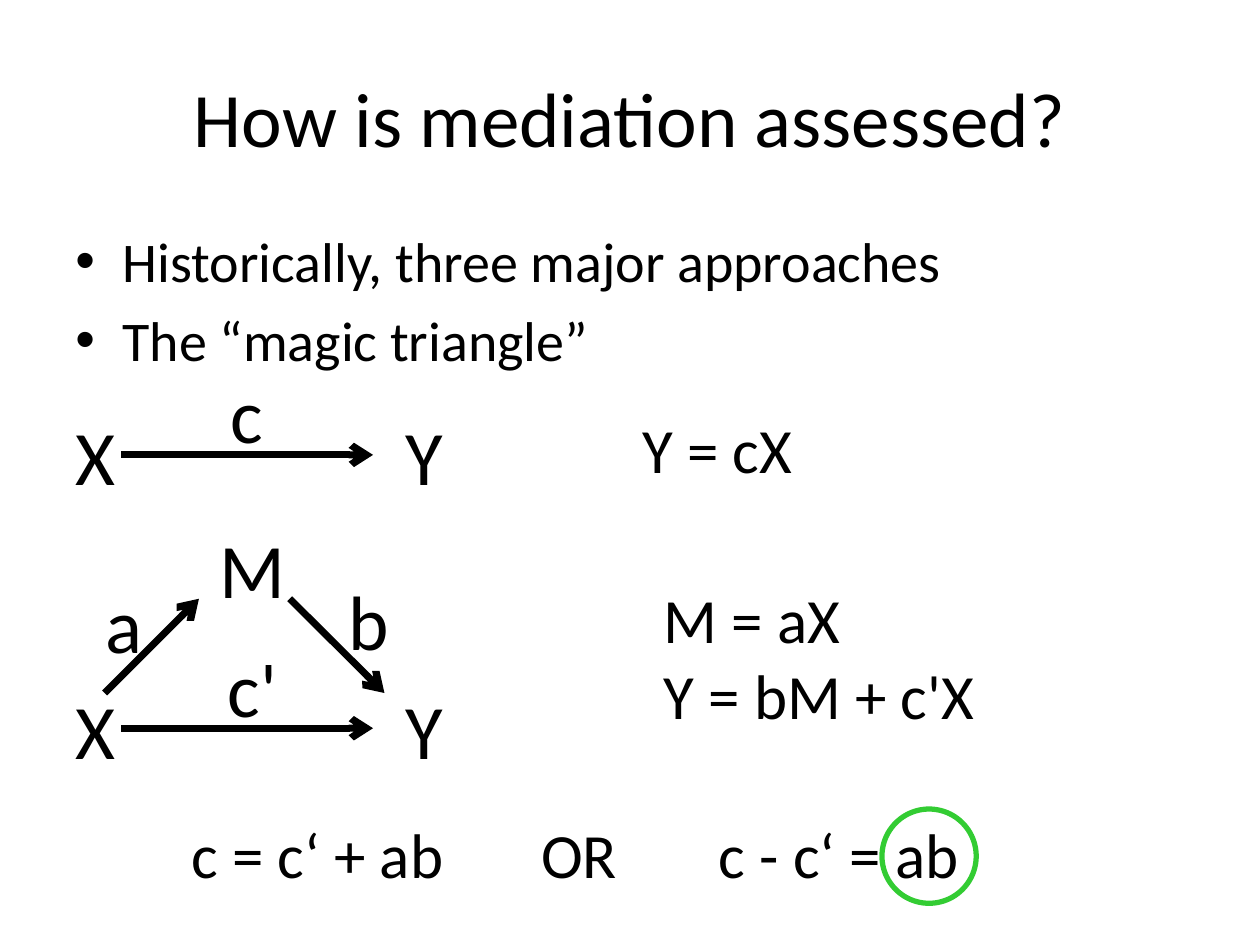
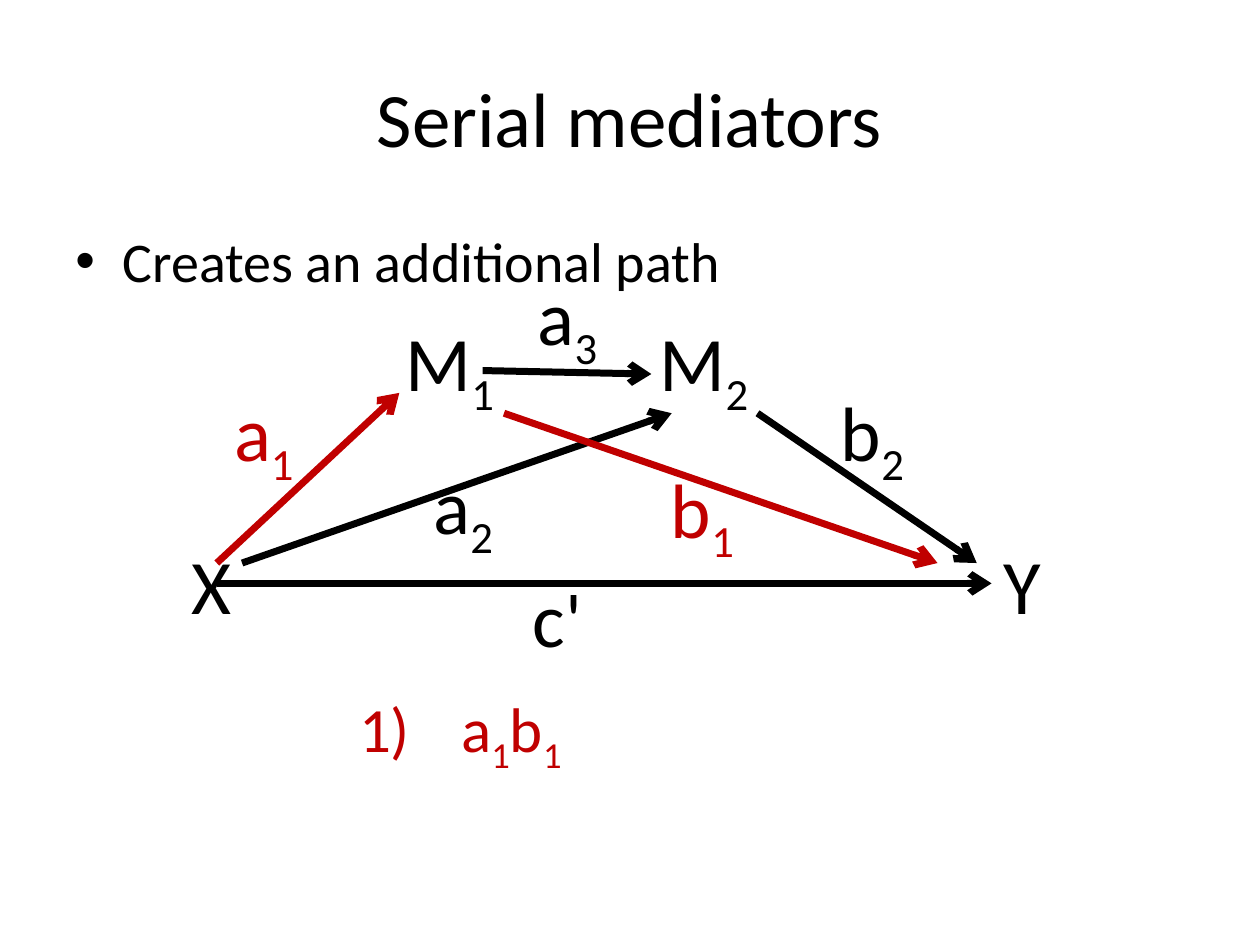
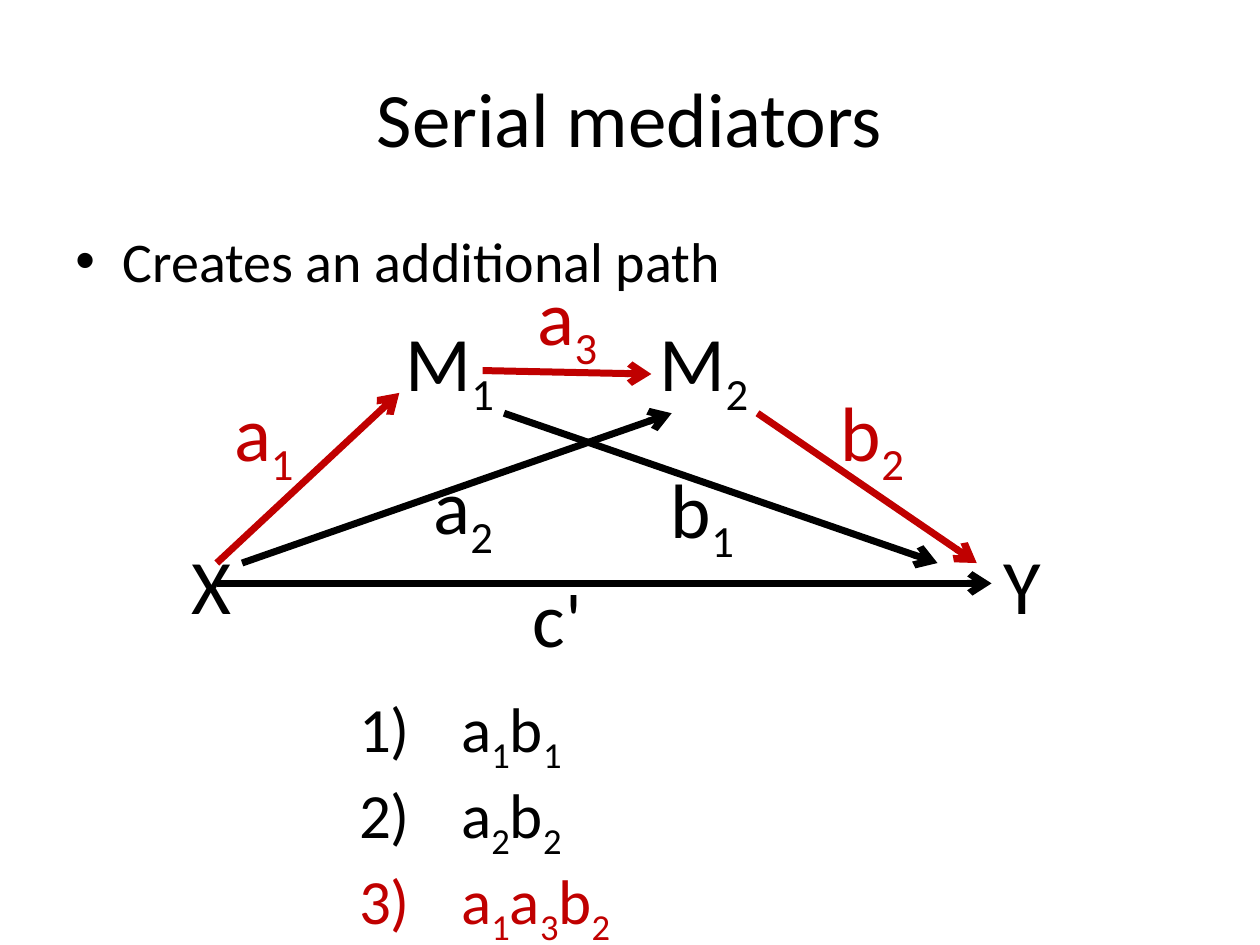
from itertools import groupby

from lxml.etree import SubElement
from pptx import Presentation
from pptx.dml.color import RGBColor
from pptx.enum.shapes import MSO_CONNECTOR as Connector, MSO_SHAPE as Shape
from pptx.enum.text import MSO_ANCHOR as Anchor, MSO_AUTO_SIZE as AutoSize, PP_ALIGN as Align
from pptx.oxml.ns import qn
from pptx.util import Cm, Pt

FONT = "Calibri"
BLACK, RED, GREEN = "000000", "C00000", "33CC33"
LABEL_HEIGHT = 2.39
NARROW, MEDIUM, WIDE = 0.76, 2.16, 2.59

NODES = [
    ("X", 3.61, 10.57, NARROW),
    ("Y", 19.99, 10.57, NARROW),
    ("M1", 7.77, 6.2, WIDE),
    ("M2", 12.9, 6.2, WIDE),
]
PATHS = [
    ("c'", (10.16, 11.23), (4.37, 11.76), (19.99, 11.76)),
    ("a1", (4.24, 7.62), (4.37, 11.35), (8.05, 7.92)),
    ("a3", (10.36, 5.28), (9.73, 7.47), (13.13, 7.54)),
    ("a2", (8.26, 9.09), (4.88, 11.35), (13.54, 8.33)),
    ("b2", (16.51, 7.62), (15.27, 8.33), (19.69, 11.35)),
    ("b1", (13.08, 9.17), (10.16, 8.33), (18.9, 11.35)),
]


def rgb(color):
    """Turn a hex string into a colour."""
    return RGBColor.from_string(color)


def add_runs(paragraph, text, size, color):
    """Write text as runs, with digits as subscripts."""
    for is_digit, characters in groupby(text, str.isdigit):
        run = paragraph.add_run()
        run.text = "".join(characters)
        run.font.name = FONT
        run.font.size = Pt(size)
        run.font.color.rgb = rgb(color)
        if is_digit:
            run.font._rPr.set("baseline", "-25000")


def add_bullet(paragraph, indent, numbered):
    """Give a paragraph a hanging bullet or number."""
    properties = paragraph._p.get_or_add_pPr()
    properties.set("marL", str(Cm(indent)))
    properties.set("indent", str(-Cm(indent)))
    SubElement(properties, qn("a:buFont"), typeface=FONT if numbered else "Arial")
    if numbered:
        SubElement(properties, qn("a:buAutoNum"), type="arabicParenR")
    else:
        SubElement(properties, qn("a:buChar"), char="•")


def add_tabs(paragraph, positions):
    """Set left tab stops on a paragraph."""
    tabs = SubElement(paragraph._p.get_or_add_pPr(), qn("a:tabLst"))
    for position in positions:
        SubElement(tabs, qn("a:tab"), pos=str(Cm(position)), algn="l")


def write_text(frame, lines, *, size, color=BLACK, last_color=None, align=Align.LEFT,
               anchor=Anchor.TOP, space_before=0, indent=None, numbered=False, tabs=()):
    """Fill a text frame with formatted lines."""
    frame.word_wrap = True
    frame.vertical_anchor = anchor
    for index, line in enumerate(lines):
        paragraph = frame.add_paragraph() if index else frame.paragraphs[0]
        paragraph.alignment = align
        paragraph.space_before = Pt(space_before)
        if indent:
            add_bullet(paragraph, indent, numbered)
        if tabs:
            add_tabs(paragraph, tabs)
        is_last = index == len(lines) - 1
        add_runs(paragraph, line, size, last_color if last_color and is_last else color)


def add_text(shapes, lines, left, top, width, height, grow=True, **text_format):
    """Add a text box and return its frame."""
    box = shapes.add_textbox(Cm(left), Cm(top), Cm(width), Cm(height))
    write_text(box.text_frame, lines, **text_format)
    if grow:
        box.text_frame.auto_size = AutoSize.SHAPE_TO_FIT_TEXT
    return box.text_frame


def add_label(shapes, text, left, top, width=MEDIUM, color=BLACK):
    """Add a diagram label."""
    frame = add_text(shapes, [text], left, top, width, LABEL_HEIGHT, size=44, color=color,
                     align=Align.CENTER, anchor=Anchor.MIDDLE, space_before=8.8)
    frame.margin_left = frame.margin_right = Cm(0.25)
    frame.margin_top = frame.margin_bottom = Cm(0.25)


def add_arrow(shapes, start, end, color=BLACK):
    """Add an arrow between two points."""
    ends = [Cm(value) for value in (*start, *end)]
    arrow = shapes.add_connector(Connector.STRAIGHT, *ends)
    arrow.line.color.rgb = rgb(color)
    arrow.line.width = Pt(4)
    SubElement(arrow.line._get_or_add_ln(), qn("a:tailEnd"), type="arrow")
    SubElement(arrow._element.spPr, qn("a:effectLst"))


def add_equations(shapes, lines, left, top, width, height, **text_format):
    """Add equations or path products."""
    add_text(shapes, lines, left, top, width, height, size=36, **text_format)


def add_direct_path(shapes, label, label_left, label_width, top):
    """Add the X to Y arrow with its label."""
    add_label(shapes, label, label_left, top - 0.85, label_width)
    add_label(shapes, "X", 1.27, top, NARROW)
    add_label(shapes, "Y", 7.92, top, NARROW)
    add_arrow(shapes, (2.44, top + 1.19), (7.52, top + 1.19))


def add_slide(presentation, title, bullets):
    """Add a titled slide with bullets and return its shapes."""
    shapes = presentation.slides.add_slide(presentation.slide_layouts[5]).shapes
    heading = shapes.title
    heading.left, heading.top = Cm(1.27), Cm(0.76)
    heading.width, heading.height = Cm(22.86), Cm(3.18)
    write_text(heading.text_frame, [title], size=44, align=Align.CENTER, anchor=Anchor.MIDDLE)
    add_text(shapes, bullets, 1.27, 4.45, 22.86, 12.57, grow=False, size=32,
             space_before=6.4, indent=0.95)
    return shapes


def add_triangle_slide(presentation):
    """Add the slide on the mediation triangle."""
    shapes = add_slide(presentation, "How is mediation assessed?",
                       ["Historically, three major approaches", "The “magic triangle”"])
    total = shapes.add_group_shape().shapes
    add_direct_path(total, "c", 4.19, 1.57, 7.98)

    triangle = shapes.add_group_shape().shapes
    add_direct_path(triangle, "c'", 4.01, MEDIUM, 13.49)
    add_label(triangle, "M", 4.17, 10.24, 1.6)
    add_arrow(triangle, (2.11, 13.97), (4.01, 12.07))
    add_arrow(triangle, (5.84, 12.07), (7.75, 13.97))
    add_label(triangle, "a", 1.42, 11.35)
    add_label(triangle, "b", 6.35, 11.3)

    add_equations(shapes, ["Y = cX"], 12.7, 8.15, 7.82, 1.8)
    add_equations(shapes, ["M = aX", "Y = bM + c'X"], 13.13, 11.58, 7.82, 3.33)
    add_equations(shapes, ["c = c‘ + ab\tOR\tc - c‘ = ab"], 3.61, 16.31, 18.19, 1.8,
                  tabs=(7.05, 10.63))

    circle = shapes.add_shape(Shape.OVAL, Cm(17.78), Cm(16.31), Cm(1.9), Cm(1.9))
    circle.shadow.inherit = False
    circle.fill.background()
    circle.line.color.rgb = rgb(GREEN)
    circle.line.width = Pt(3)


def add_serial_slide(presentation, products, active):
    """Add a serial mediation slide with the active paths in red."""
    shapes = add_slide(presentation, "Serial mediators", ["Creates an additional path"])
    for node in NODES:
        add_label(shapes, *node)
    for name, position, start, end in PATHS:
        color = RED if name in active else BLACK
        add_arrow(shapes, start, end, color)
        add_label(shapes, name, *position, color=color)
    add_equations(shapes, products, 6.99, 13.77, 11.63, 0.26 + 1.54 * len(products),
                  last_color=RED, indent=2.06, numbered=True)


def main():
    """Build and save the presentation."""
    presentation = Presentation()
    presentation.slide_width, presentation.slide_height = Cm(25.4), Cm(19.05)
    add_triangle_slide(presentation)
    add_serial_slide(presentation, ["a1b1"], {"a1", "b1"})
    add_serial_slide(presentation, ["a1b1", "a2b2", "a1a3b2"], {"a1", "a3", "b2"})
    presentation.save("out.pptx")


if __name__ == "__main__":
    main()
